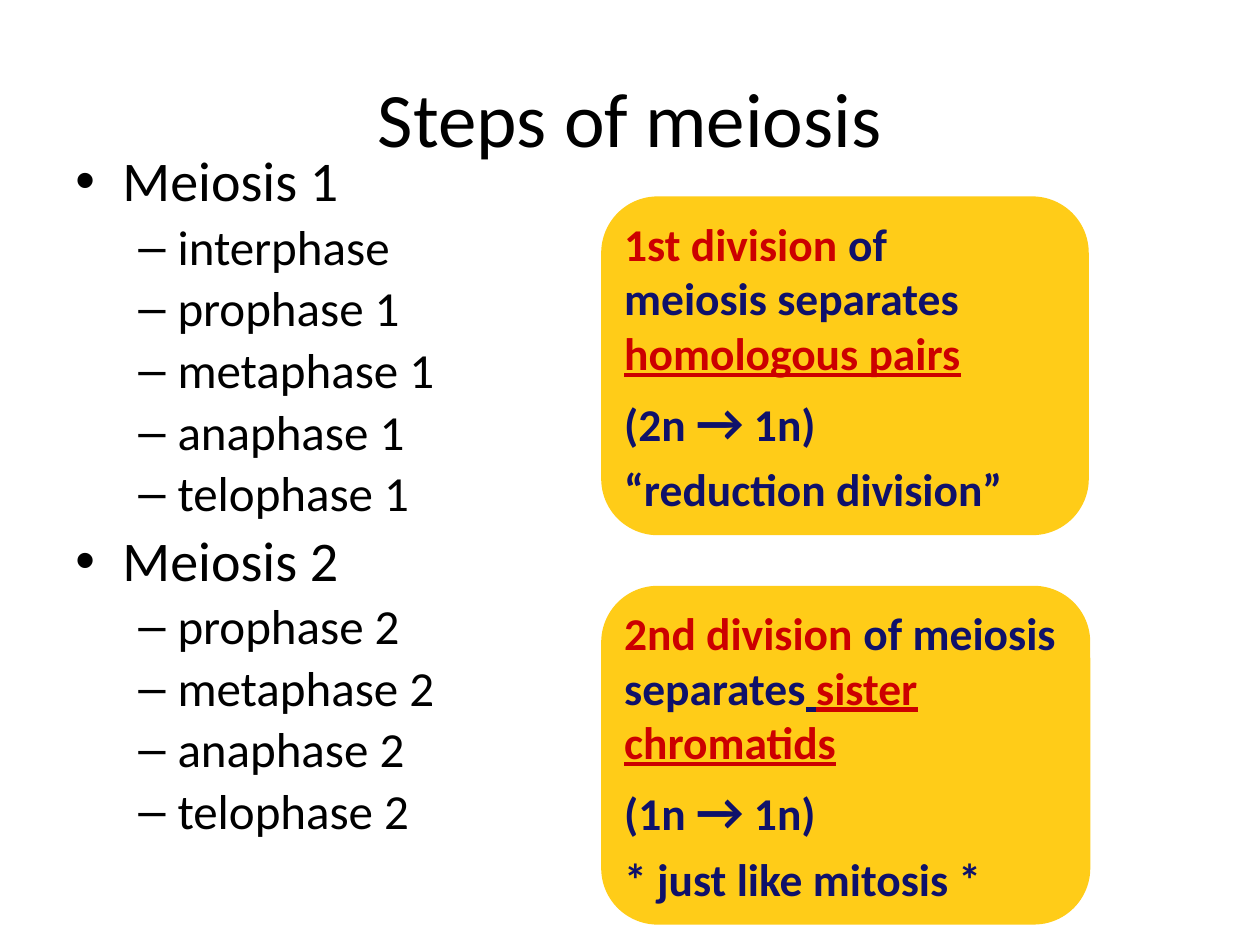
from typing import NamedTuple

from lxml.etree import SubElement
from pptx import Presentation
from pptx.dml.color import RGBColor
from pptx.enum.shapes import MSO_SHAPE
from pptx.enum.text import MSO_ANCHOR, PP_ALIGN
from pptx.oxml.ns import qn
from pptx.util import Cm, Pt

BLACK, GOLD, RED, NAVY = "000000", "FFCC18", "CC0000", "0F116A"


class Level(NamedTuple):
    bullet: str
    size: int
    margin: float
    hanging: float
    before: float


class Phase(NamedTuple):
    name: str
    steps: list[str]


class Run(NamedTuple):
    text: str
    color: str = NAVY
    size: int = 26
    underline: bool = False


class Callout(NamedTuple):
    top: float
    width: float
    paragraphs: list[list[Run]]


LEVELS = [Level("•", 32, 0.95, 0.95, 6), Level("–", 28, 2.06, 0.79, 5)]

PHASES = [
    Phase("Meiosis 1", ["interphase", "prophase 1", "metaphase 1",
                        "anaphase 1", "telophase 1"]),
    Phase("Meiosis 2", ["prophase 2", "metaphase 2", "anaphase 2",
                        "telophase 2"]),
]


def ploidy(before: str) -> list[Run]:
    """Return the chromosome-count line, with its larger arrow."""
    return [Run(f"({before} "), Run("→", size=30), Run(" 1n)")]


CALLOUTS = [
    Callout(11.81, 9.86, [
        [Run("2nd division", RED), Run(" of meiosis separates"),
         Run(" ", underline=True), Run("sister chromatids", RED, underline=True)],
        ploidy("1n"),
        [Run("* just like mitosis *")],
    ]),
    Callout(3.96, 9.83, [
        [Run("1st division", RED), Run(" of \vmeiosis separates"),
         Run(" ", underline=True), Run("homologous pairs", RED, underline=True)],
        ploidy("2n"),
        [Run("“reduction division”")],
    ]),
]


def rgb(value: str) -> RGBColor:
    return RGBColor.from_string(value)


def place(s, left: float, top: float, width: float, height: float) -> None:
    box = {"left": left, "top": top, "width": width, "height": height}
    for name, value in box.items():
        setattr(s, name, Cm(value))


def add_run(p, text: str, color: str, size: int, **extra) -> None:
    """Add text to a paragraph, turning each vertical tab into a line break."""
    font_format = {"name": "Calibri", "size": Pt(size), **extra}
    for i, part in enumerate(text.split("\v")):
        if i:
            p.add_line_break()
        r = p.add_run()
        r.text = part
        r.font.color.rgb = rgb(color)
        for name, value in font_format.items():
            setattr(r.font, name, value)


def next_paragraph(tf, first: bool):
    return tf.paragraphs[0] if first else tf.add_paragraph()


def add_title(s, text: str) -> None:
    place(s, 1.27, 0.76, 22.86, 3.18)
    tf = s.text_frame
    tf.vertical_anchor = MSO_ANCHOR.MIDDLE
    p = tf.paragraphs[0]
    p.alignment = PP_ALIGN.CENTER
    add_run(p, text, BLACK, 44)


def add_outline(slide, phases: list[Phase]) -> None:
    s = slide.shapes.add_textbox(Cm(1.27), Cm(2.97), Cm(9.86), Cm(14.83))
    tf = s.text_frame
    tf.word_wrap = True
    items = [(depth, text) for phase in phases
             for depth, text in [(0, phase.name), *((1, t) for t in phase.steps)]]
    for i, (depth, text) in enumerate(items):
        level = LEVELS[depth]
        p = next_paragraph(tf, i == 0)
        p.level = depth
        p.line_spacing = 0.9
        p.space_before = Pt(level.before)
        pPr = p._p.get_or_add_pPr()
        pPr.set("marL", str(Cm(level.margin)))
        pPr.set("indent", str(-Cm(level.hanging)))
        SubElement(pPr, qn("a:buFont"), typeface="Arial")
        SubElement(pPr, qn("a:buChar"), char=level.bullet)
        add_run(p, text, BLACK, level.size)


def add_callout(slide, callout: Callout) -> None:
    s = slide.shapes.add_shape(MSO_SHAPE.ROUNDED_RECTANGLE, Cm(12.12),
                               Cm(callout.top), Cm(callout.width), Cm(6.83))
    s.shadow.inherit = False
    s.fill.solid()
    s.fill.fore_color.rgb = rgb(GOLD)
    s.line.fill.background()
    tf = s.text_frame
    frame_format = {"word_wrap": True, "vertical_anchor": MSO_ANCHOR.MIDDLE,
                    "margin_left": Cm(0.13), "margin_top": 0,
                    "margin_right": 0, "margin_bottom": 0}
    for name, value in frame_format.items():
        setattr(tf, name, value)
    for i, runs in enumerate(callout.paragraphs):
        p = next_paragraph(tf, i == 0)
        p.alignment = PP_ALIGN.LEFT
        p.space_before = Pt(5.5)
        for run in runs:
            add_run(p, run.text, run.color, run.size, bold=True,
                    underline=run.underline)


def main() -> None:
    prs = Presentation()
    prs.slide_width, prs.slide_height = Cm(25.4), Cm(19.05)
    slide = prs.slides.add_slide(prs.slide_layouts[5])
    add_title(slide.shapes.title, "Steps of meiosis")
    add_outline(slide, PHASES)
    for callout in CALLOUTS:
        add_callout(slide, callout)
    prs.save("out.pptx")


if __name__ == "__main__":
    main()
